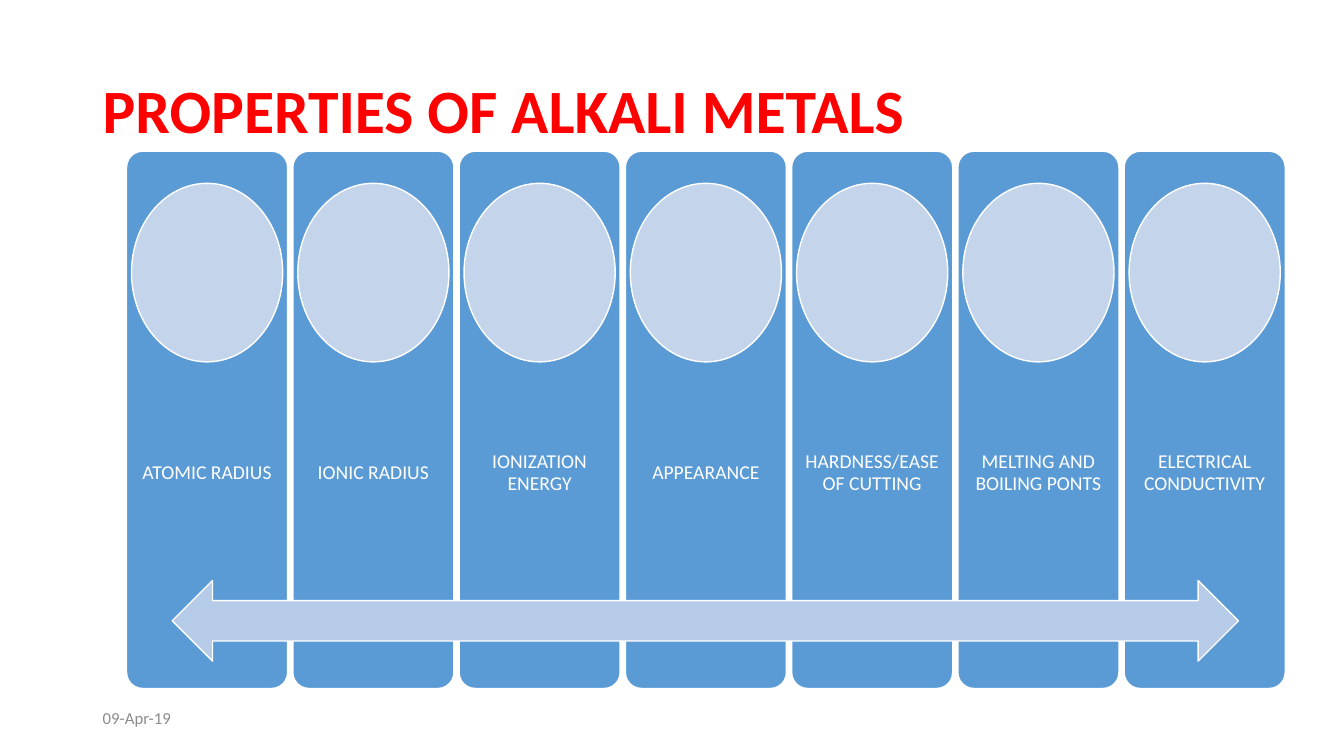
import pptx
import pptx.util
import pptx.dml.color
import pptx.enum.shapes
import pptx.enum.text
from dataclasses import dataclass

Cm, Pt = pptx.util.Cm, pptx.util.Pt
SHAPE = pptx.enum.shapes.MSO_SHAPE
ALIGN = pptx.enum.text.PP_ALIGN


@dataclass(frozen=True)
class Theme:
    font: str = "Calibri"
    title: str = "FF0000"
    column: str = "5B9BD5"
    circle: str = "C4D5EB"
    arrow: str = "B5CBE7"
    white: str = "FFFFFF"
    date: str = "8C8C8C"
    title_size: int = 44
    label_size: int = 14
    date_size: int = 12
    line_width: int = 1


def rgb(color):
    return pptx.dml.color.RGBColor.from_string(color)


class SlideBuilder:
    """Draws themed elements on one slide, with lengths in centimetres."""

    def __init__(self, slide, theme):
        self.slide = slide
        self.theme = theme

    def shape(self, kind, left, top, width, height, fill):
        sp = self.slide.shapes.add_shape(kind, Cm(left), Cm(top), Cm(width), Cm(height))
        sp.shadow.inherit = False
        sp.fill.solid()
        sp.fill.fore_color.rgb = rgb(fill)
        sp.line.color.rgb = rgb(self.theme.white)
        sp.line.width = Pt(self.theme.line_width)
        return sp

    def text(self, text, left, top, width, height, size, color,
             bold=False, align=ALIGN.LEFT, spacing=1.0, inset=None):
        sp = self.slide.shapes.add_textbox(Cm(left), Cm(top), Cm(width), Cm(height))
        tf = sp.text_frame
        tf.word_wrap = True
        tf.vertical_anchor = pptx.enum.text.MSO_ANCHOR.MIDDLE
        if inset is not None:
            tf.margin_left = tf.margin_right = Cm(inset)
            tf.margin_top = tf.margin_bottom = Cm(inset)
        tf.text = text
        p = tf.paragraphs[0]
        p.alignment = align
        p.line_spacing = spacing
        font = p.runs[0].font
        font.name = self.theme.font
        font.size = Pt(size)
        font.bold = bold
        font.color.rgb = rgb(color)

    def column(self, label, left):
        """Draw a rounded panel with its label and the circle above it."""
        t = self.theme
        width, circle_width = 4.06, 3.81
        panel = self.shape(SHAPE.ROUNDED_RECTANGLE, left, 3.81, width, 13.54, t.column)
        panel.adjustments[0] = 0.1
        self.text(label, left, 9.22, width, 5.41, t.label_size, t.white,
                  align=ALIGN.CENTER, spacing=0.9, inset=0.28)
        self.shape(SHAPE.OVAL, left + (width - circle_width) / 2, 4.62,
                   circle_width, 4.5, t.circle)


PROPERTIES = [
    "ATOMIC RADIUS",
    "IONIC RADIUS",
    "IONIZATION ENERGY",
    "APPEARANCE",
    "HARDNESS/EASE OF CUTTING",
    "MELTING AND BOILING PONTS",
    "ELECTRICAL CONDUCTIVITY",
]
FIRST_LEFT, PITCH = 3.19, 4.19


def main():
    prs = pptx.Presentation()
    prs.slide_width, prs.slide_height = Cm(33.87), Cm(19.05)
    theme = Theme()
    s = SlideBuilder(prs.slides.add_slide(prs.slide_layouts[6]), theme)

    s.text("PROPERTIES OF ALKALI METALS", 2.34, 1.02, 29.21, 3.68,
           theme.title_size, theme.title, bold=True, spacing=0.9)
    for i, label in enumerate(PROPERTIES):
        s.column(label, FIRST_LEFT + i * PITCH)
    s.shape(SHAPE.LEFT_RIGHT_ARROW, 4.34, 14.63, 26.87, 2.03, theme.arrow)
    s.text("09-Apr-19", 2.34, 17.58, 7.62, 1.02, theme.date_size, theme.date)

    prs.save("out.pptx")


if __name__ == "__main__":
    main()
